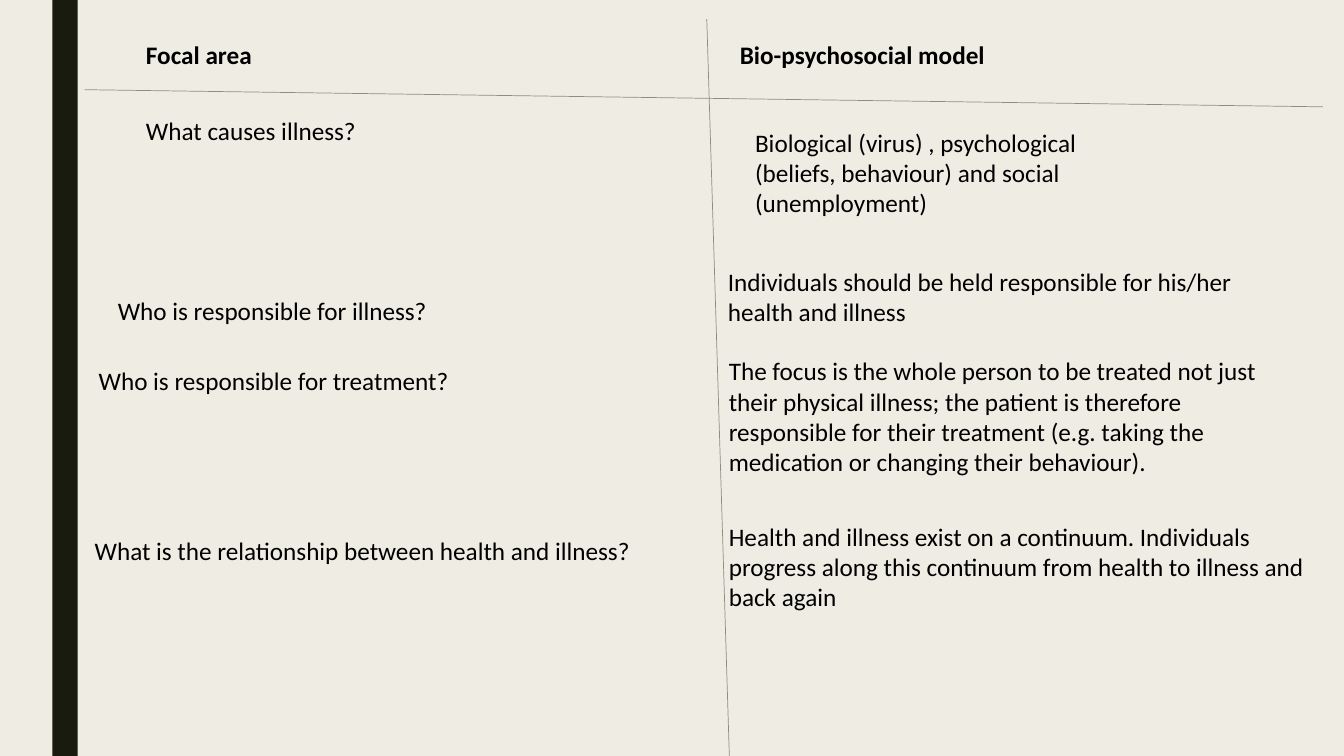
import pptx
import pptx.dml.color
import pptx.enum.shapes
import pptx.enum.text
import pptx.util
from lxml import etree

SLIDE_W, SLIDE_H = 13.33, 7.5
COLOURS = {"background": "EFEDE3", "band": "191B0E", "rule": "8C8D86", "text": "000000"}
FONT, SIZE = "Calibri", 18
LINE_H, PADDING = 0.3, 0.1  # inches per text line, top and bottom inset together

BAND = (0.52, 0, 0.25, SLIDE_H)
RULES = [((7.01, 0.19), (7.24, 7.7)), ((0.84, 0.89), (13.12, 1.06))]

# Each entry: text, left, top, width, lines
HEADINGS = [
    ("Focal area", 1.35, 0.34, 6.66, 1),
    ("Bio-psychosocial model", 7.24, 0.34, 6.66, 1),
]
QUESTIONS = [
    ("What causes illness?", 1.35, 1.09, 6.03, 1),
    ("Who is responsible for illness?", 1.07, 2.88, 6.95, 1),
    ("Who is responsible for treatment?", 0.88, 3.58, 6.95, 1),
    ("What is the relationship between health and illness?", 0.84, 5.26, 6.95, 1),
]
ANSWERS = [
    ("Biological (virus) , psychological (beliefs, behaviour) and social (unemployment)",
     7.39, 1.21, 3.58, 4),
    ("Individuals should be held responsible for his/her health and illness",
     7.12, 2.59, 5.88, 2),
    ("The focus is the whole person to be treated not just their physical illness; "
     "the patient is therefore responsible for their treatment (e.g. taking the "
     "medication or changing their behaviour).", 7.13, 3.48, 5.66, 4),
    ("Health and illness exist on a continuum. Individuals progress along this "
     "continuum from health to illness and back again", 7.13, 5.12, 6.05, 3),
]


def inches(*lengths):
    return [pptx.util.Inches(length) for length in lengths]


def colour(name):
    return pptx.dml.color.RGBColor.from_string(COLOURS[name])


def add_band(slide):
    band = slide.shapes.add_shape(pptx.enum.shapes.MSO_SHAPE.RECTANGLE, *inches(*BAND))
    band.shadow.inherit = False
    band.fill.solid()
    band.fill.fore_color.rgb = colour("band")
    band.line.fill.background()


def add_rule(slide, start, end):
    rule = slide.shapes.add_connector(
        pptx.enum.shapes.MSO_CONNECTOR.STRAIGHT, *inches(*start, *end))
    rule.line.color.rgb = colour("rule")
    rule.line.width = pptx.util.Pt(0.5)
    etree.SubElement(rule._element.spPr, pptx.oxml.ns.qn("a:effectLst"))


def add_entry(slide, text, left, top, width, lines, bold):
    height = lines * LINE_H + PADDING
    frame = slide.shapes.add_textbox(*inches(left, top, width, height)).text_frame
    frame.word_wrap = True
    frame.auto_size = pptx.enum.text.MSO_AUTO_SIZE.SHAPE_TO_FIT_TEXT
    frame.text = text
    font = frame.paragraphs[0].runs[0].font
    font.name, font.size, font.bold = FONT, pptx.util.Pt(SIZE), bold
    font.color.rgb = colour("text")


def main():
    deck = pptx.Presentation()
    deck.slide_width, deck.slide_height = inches(SLIDE_W, SLIDE_H)
    slide = deck.slides.add_slide(deck.slide_layouts[6])
    slide.background.fill.solid()
    slide.background.fill.fore_color.rgb = colour("background")

    add_band(slide)
    for start, end in RULES:
        add_rule(slide, start, end)
    for heading in HEADINGS:
        add_entry(slide, *heading, bold=True)
    for question, answer in zip(QUESTIONS, ANSWERS):
        add_entry(slide, *question, bold=False)
        add_entry(slide, *answer, bold=False)
    deck.save("out.pptx")


if __name__ == "__main__":
    main()
